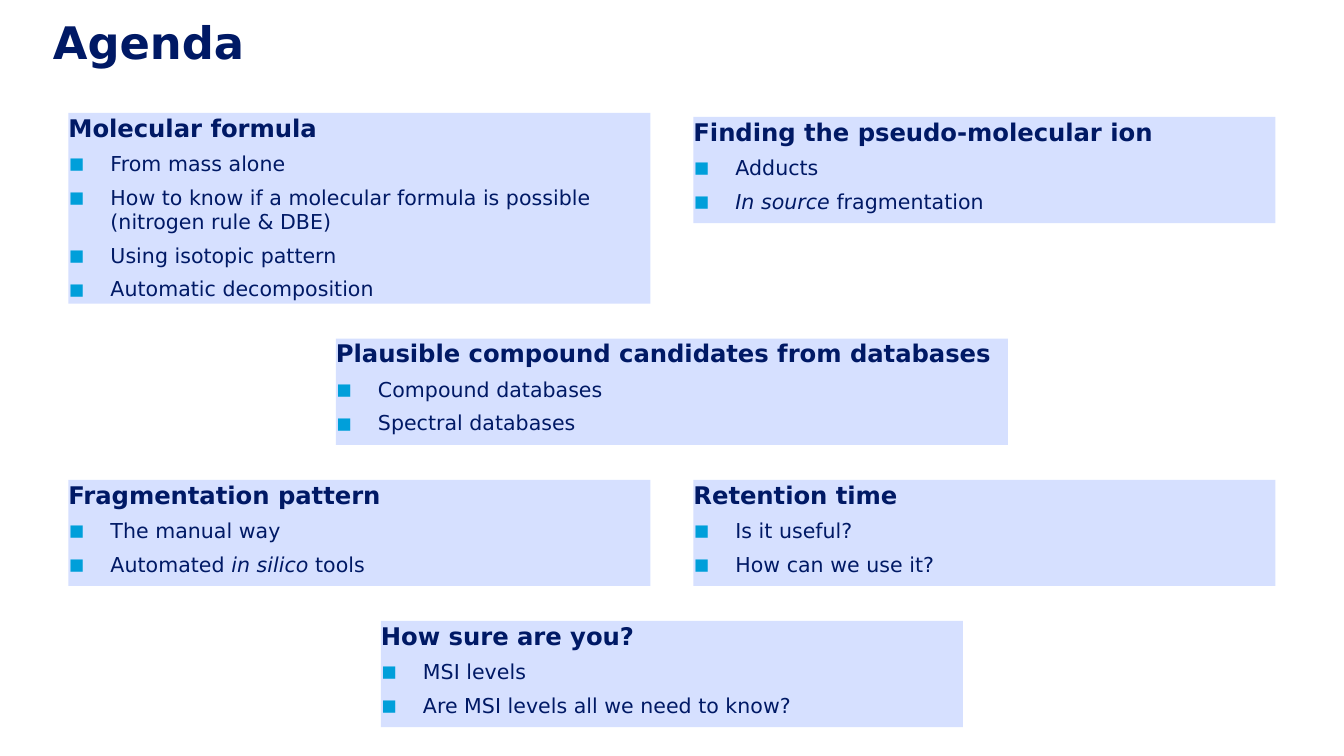
from dataclasses import dataclass

from lxml import etree
from pptx import Presentation
from pptx.dml.color import RGBColor
from pptx.enum import shapes, text
from pptx.oxml import ns
from pptx.util import Pt

COLOURS = {"navy": "001965", "panel": "D6E0FF", "bullet": "009FDA"}
FONT = "DejaVu Sans"
SLIDE_WIDTH, SLIDE_HEIGHT = 720, 405
PANEL_WIDTH, PANEL_HEIGHT = 311.76, 56.88
LEFT = 36.72
RIGHT = SLIDE_WIDTH - LEFT - PANEL_WIDTH
ROW_PITCH = 75.6
ROWS = [181.44 + ROW_PITCH * index for index in range(3)]
INDENT = 22.5


@dataclass(frozen=True)
class Span:
    words: str
    italic: bool = False


@dataclass(frozen=True)
class Topic:
    heading: str
    items: tuple[tuple[Span, ...], ...]
    left: float
    top: float
    width: float = PANEL_WIDTH
    height: float = PANEL_HEIGHT


def plain(*lines: str) -> tuple[tuple[Span, ...], ...]:
    return tuple((Span(line),) for line in lines)


def centred(width: float) -> float:
    return (SLIDE_WIDTH - width) / 2


TOPICS = [
    Topic("Molecular formula", plain(
        "From mass alone",
        "How to know if a molecular formula is possible (nitrogen rule & DBE)",
        "Using isotopic pattern",
        "Automatic decomposition",
    ), LEFT, 60.48, height=102.24),
    Topic("Finding the pseudo-molecular ion", (
        *plain("Adducts"),
        (Span("In source", True), Span(" fragmentation")),
    ), RIGHT, 62.64),
    Topic("Plausible compound candidates from databases",
          plain("Compound databases", "Spectral databases"),
          centred(360), ROWS[0], width=360),
    Topic("Fragmentation pattern", (
        *plain("The manual way"),
        (Span("Automated "), Span("in silico", True), Span(" tools")),
    ), LEFT, ROWS[1]),
    Topic("Retention time", plain("Is it useful?", "How can we use it?"),
          RIGHT, ROWS[1]),
    Topic("How sure are you?",
          plain("MSI levels", "Are MSI levels all we need to know?"),
          centred(PANEL_WIDTH), ROWS[2]),
]


def colour(name: str) -> RGBColor:
    return RGBColor.from_string(COLOURS[name])


def add_run(paragraph, words: str, size: float, bold: bool = False,
            italic: bool = False) -> None:
    run = paragraph.add_run()
    run.text = words
    run.font.name = FONT
    run.font.size = Pt(size)
    run.font.bold = bold
    run.font.italic = italic
    run.font.color.rgb = colour("navy")


def prepare_frame(shape, left: float = 0, top: float = 0):
    frame = shape.text_frame
    frame.word_wrap = True
    frame.vertical_anchor = text.MSO_ANCHOR.TOP
    frame.margin_left, frame.margin_top = Pt(left), Pt(top)
    frame.margin_right = frame.margin_bottom = 0
    return frame


def add_bullet(paragraph) -> None:
    properties = paragraph._p.get_or_add_pPr()
    properties.set("marL", str(Pt(INDENT)))
    properties.set("indent", str(-Pt(INDENT)))
    bullet_colour = etree.SubElement(properties, ns.qn("a:buClr"))
    etree.SubElement(bullet_colour, ns.qn("a:srgbClr"), val=COLOURS["bullet"])
    etree.SubElement(properties, ns.qn("a:buSzPct"), val="120000")
    etree.SubElement(properties, ns.qn("a:buFont"), typeface=FONT)
    etree.SubElement(properties, ns.qn("a:buChar"), char="▪")


def draw_title(slide, words: str) -> None:
    shape = slide.shapes.add_textbox(0, 0, Pt(SLIDE_WIDTH), Pt(72))
    frame = prepare_frame(shape, left=28.35, top=8)
    add_run(frame.paragraphs[0], words, 24, bold=True)


def draw_topic(slide, topic: Topic) -> None:
    shape = slide.shapes.add_shape(
        shapes.MSO_SHAPE.RECTANGLE, Pt(topic.left), Pt(topic.top),
        Pt(topic.width), Pt(topic.height))
    shape.shadow.inherit = False
    shape.fill.solid()
    shape.fill.fore_color.rgb = colour("panel")
    shape.line.fill.background()
    frame = prepare_frame(shape)
    heading = frame.paragraphs[0]
    heading.alignment = text.PP_ALIGN.LEFT
    add_run(heading, topic.heading, 13, bold=True)
    for item in topic.items:
        paragraph = frame.add_paragraph()
        paragraph.alignment = text.PP_ALIGN.LEFT
        paragraph.space_before = Pt(4.8)
        add_bullet(paragraph)
        for span in item:
            add_run(paragraph, span.words, 11, italic=span.italic)


def main() -> None:
    presentation = Presentation()
    presentation.slide_width = Pt(SLIDE_WIDTH)
    presentation.slide_height = Pt(SLIDE_HEIGHT)
    slide = presentation.slides.add_slide(presentation.slide_layouts[6])
    draw_title(slide, "Agenda")
    for topic in TOPICS:
        draw_topic(slide, topic)
    presentation.save("out.pptx")


if __name__ == "__main__":
    main()
